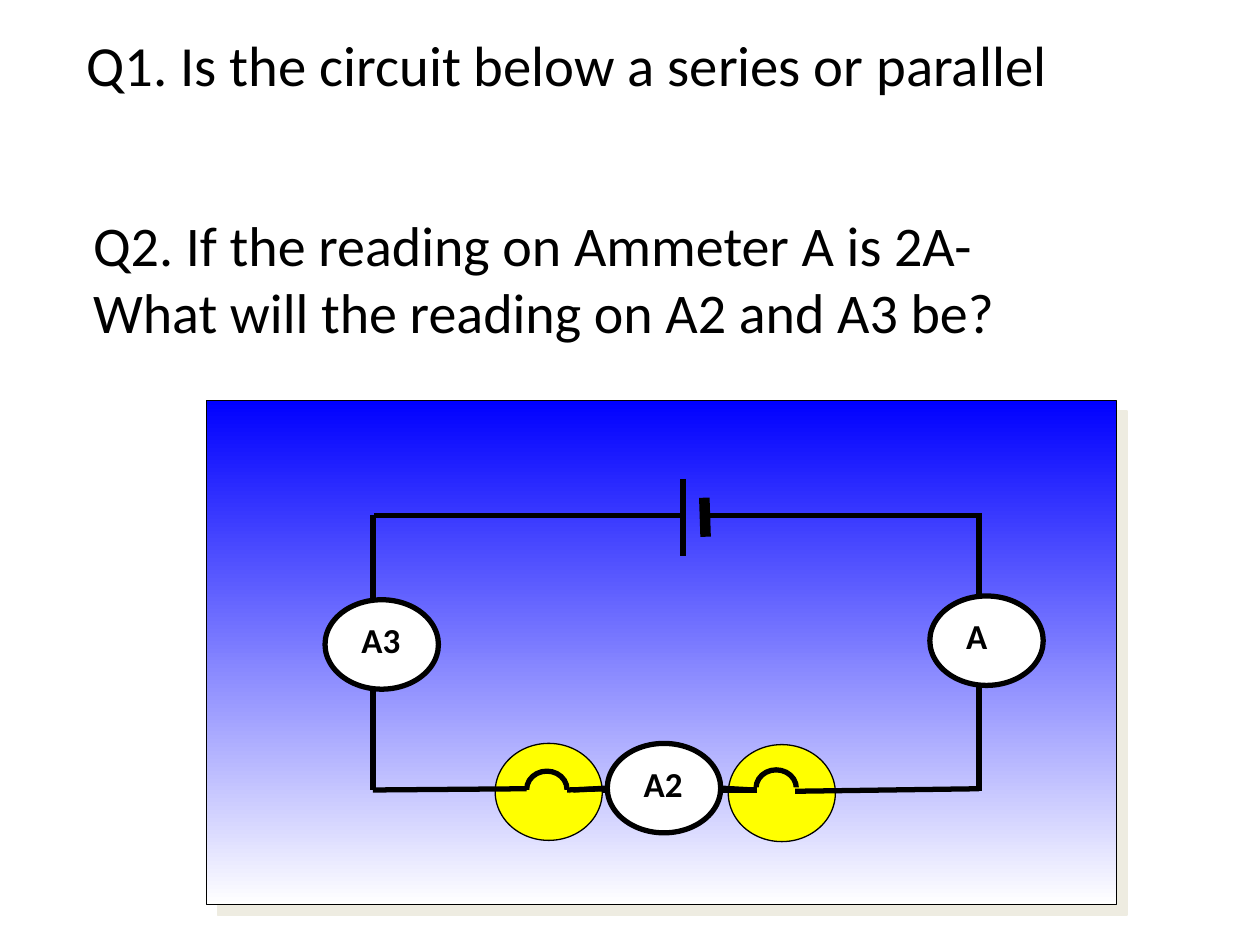
import pptx
import pptx.dml.color
import pptx.enum.shapes
import pptx.enum.text
import pptx.oxml.ns
import pptx.util
from lxml import etree
from pptx.util import Inches

RGBColor = pptx.dml.color.RGBColor
BLACK = RGBColor(0x00, 0x00, 0x00)
WHITE = RGBColor(0xFF, 0xFF, 0xFF)
BLUE = RGBColor(0x00, 0x00, 0xFF)
YELLOW = RGBColor(0xFF, 0xFF, 0x00)
SHADOW = RGBColor(0xEE, 0xEC, 0xE1)

SHAPE = pptx.enum.shapes.MSO_SHAPE
ANCHOR = pptx.enum.text.MSO_ANCHOR
ALIGN = pptx.enum.text.PP_ALIGN
LEFT_SITE, RIGHT_SITE = 1, 3

QUESTION_1 = "Q1. Is the circuit below a series or parallel\v"
QUESTION_2 = "Q2. If the reading on Ammeter A is 2A-\vWhat will the reading on A2 and A3 be?"

# Wires as (start, end, width in points), in inches from the panel's corner
BACK_WIRES = [
    ((3.78, 0.62), (3.78, 1.23), 3),  # long plate of the cell
    ((3.95, 0.77), (3.96, 1.08), 6),  # short plate of the cell
    ((3.95, 0.91), (6.14, 0.91), 3),
    ((6.13, 3.08), (4.67, 3.10), 3),
    ((1.32, 3.09), (1.32, 0.91), 3),
    ((1.33, 0.91), (3.77, 0.91), 3),
    ((4.37, 3.09), (3.03, 3.09), 3),
]
FRONT_WIRES = [
    ((2.54, 3.08), (1.32, 3.09), 3),
    ((2.86, 3.09), (3.18, 3.08), 3),
    ((6.13, 0.89), (6.13, 3.10), 3),
]


def write_text(frame, text, size, bold=False, align=ALIGN.LEFT, anchor=ANCHOR.TOP):
    frame.word_wrap = True
    frame.vertical_anchor = anchor
    frame.text = text
    paragraph = frame.paragraphs[0]
    paragraph.alignment = align
    font_format = {"name": "Calibri", "size": pptx.util.Pt(size), "bold": bold}
    for run in paragraph.runs:
        for attribute, value in font_format.items():
            setattr(run.font, attribute, value)
        run.font.color.rgb = BLACK


def add_text(slide, box, text, size, bold=False):
    textbox = slide.shapes.add_textbox(*map(Inches, box))
    write_text(textbox.text_frame, text, size, bold)


def add_title(slide, box):
    title = slide.shapes.title
    sides = ("left", "top", "width", "height")
    for attribute, value in zip(sides, box):
        setattr(title, attribute, Inches(value))
    write_text(title.text_frame, QUESTION_1, 32.4, align=ALIGN.CENTER, anchor=ANCHOR.MIDDLE)


def add_part(slide, kind, box, color=None, line_width=None):
    shape = slide.shapes.add_shape(kind, *map(Inches, box))
    shape.shadow.inherit = False
    if color is not None:
        shape.fill.solid()
        shape.fill.fore_color.rgb = color
    if line_width:
        shape.line.color.rgb = BLACK
        shape.line.width = pptx.util.Pt(line_width)
    else:
        shape.line.fill.background()
    return shape


def add_panel(slide, box):
    """Add the blue-to-white background with its offset shadow."""
    panel = add_part(slide, SHAPE.RECTANGLE, box, line_width=0.75)
    panel.fill.gradient()
    panel.fill.gradient_angle = 270
    for stop, color, position in zip(panel.fill.gradient_stops, (BLUE, WHITE), (0, 1)):
        stop.color.rgb = color
        stop.position = position
    qn = pptx.oxml.ns.qn
    effects = panel.element.spPr.find(qn("a:effectLst"))
    shadow = etree.SubElement(effects, qn("a:outerShdw"), dist=str(pptx.util.Pt(8.5)),
                              dir="2700000", algn="ctr", rotWithShape="0")
    etree.SubElement(shadow, qn("a:srgbClr"), val=str(SHADOW))


def add_wire(slide, origin, start, end, width=3):
    left, top = origin
    points = (left + start[0], top + start[1], left + end[0], top + end[1])
    wire = slide.shapes.add_connector(
        pptx.enum.shapes.MSO_CONNECTOR.STRAIGHT, *map(Inches, points))
    wire.line.color.rgb = BLACK
    wire.line.width = pptx.util.Pt(width)
    etree.SubElement(wire.element.spPr, pptx.oxml.ns.qn("a:effectLst"))
    return wire


def add_lamp(slide, left, top, filament, cover):
    """Add a bulb whose filament ring is half hidden by a cover."""
    add_part(slide, SHAPE.OVAL, (left, top, 0.85, 0.77), YELLOW, 0.75)
    add_part(slide, SHAPE.OVAL,
             (left + filament[0], top + filament[1], 0.32, 0.29), YELLOW, 3)
    add_part(slide, SHAPE.RECTANGLE,
             (left + cover[0], top + cover[1], *cover[2:]), YELLOW)


def add_ammeter(slide, left, top, label, label_width):
    ammeter = add_part(slide, SHAPE.OVAL, (left, top, 0.9, 0.71), WHITE, 3)
    add_text(slide, (left + 0.19, top + 0.1, label_width, 0.44), label, 20, bold=True)
    return ammeter


def add_circuit(slide, box):
    left, top = origin = box[:2]
    add_panel(slide, box)
    add_lamp(slide, left + 4.14, top + 2.73, (0.22, 0.2), (0.2, 0.34, 0.38, 0.23))
    for wire in BACK_WIRES:
        add_wire(slide, origin, *wire)
    add_lamp(slide, left + 2.29, top + 2.72, (0.25, 0.22), (0.23, 0.37, 0.36, 0.21))
    for wire in FRONT_WIRES:
        add_wire(slide, origin, *wire)
    middle_ammeter = add_ammeter(slide, left + 3.18, top + 2.72, "A2", 0.58)
    left_lead = add_wire(slide, origin, (2.91, 3.09), (3.18, 3.09))
    left_lead.end_connect(middle_ammeter, LEFT_SITE)
    right_lead = add_wire(slide, origin, (4.08, 3.09), (4.34, 3.09))
    right_lead.begin_connect(middle_ammeter, RIGHT_SITE)
    # An oval has eight sites, counted from the top: 2 is left and 6 is right
    for end in left_lead.element.iter(pptx.oxml.ns.qn("a:endCxn")):
        end.set("idx", "2")
    for start in right_lead.element.iter(pptx.oxml.ns.qn("a:stCxn")):
        start.set("idx", "6")
    add_ammeter(slide, left + 5.74, top + 1.55, "A", 0.38)
    add_ammeter(slide, left + 0.94, top + 1.58, "A3", 0.61)


def main():
    presentation = pptx.Presentation()
    presentation.slide_width = Inches(10)
    presentation.slide_height = Inches(7.5)
    slide = presentation.slides.add_slide(presentation.slide_layouts.get_by_name("Title Only"))
    add_title(slide, (-0.13, 0.6, 9.26, 0.55))
    add_circuit(slide, (1.64, 3.18, 7.22, 4))
    add_text(slide, (0.64, 1.62, 8.74, 1.18), QUESTION_2, 32)
    presentation.save("out.pptx")


if __name__ == "__main__":
    main()
